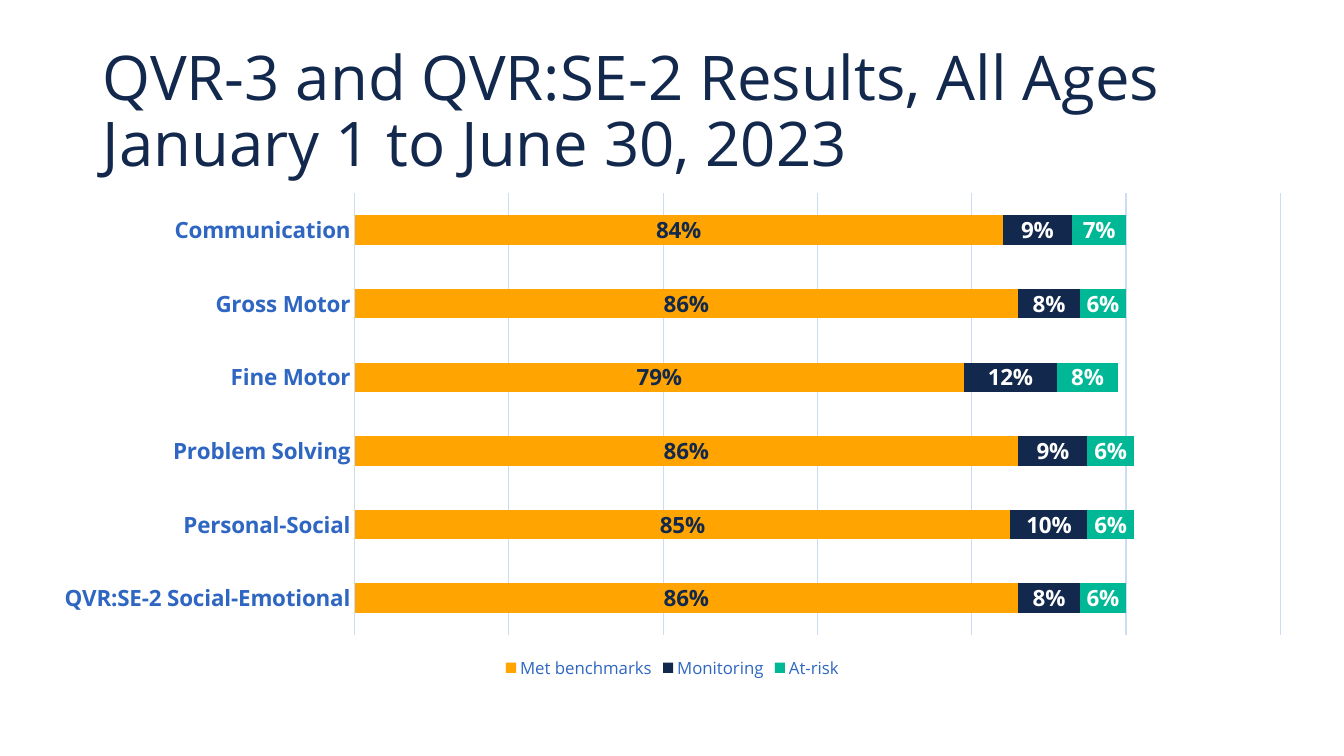
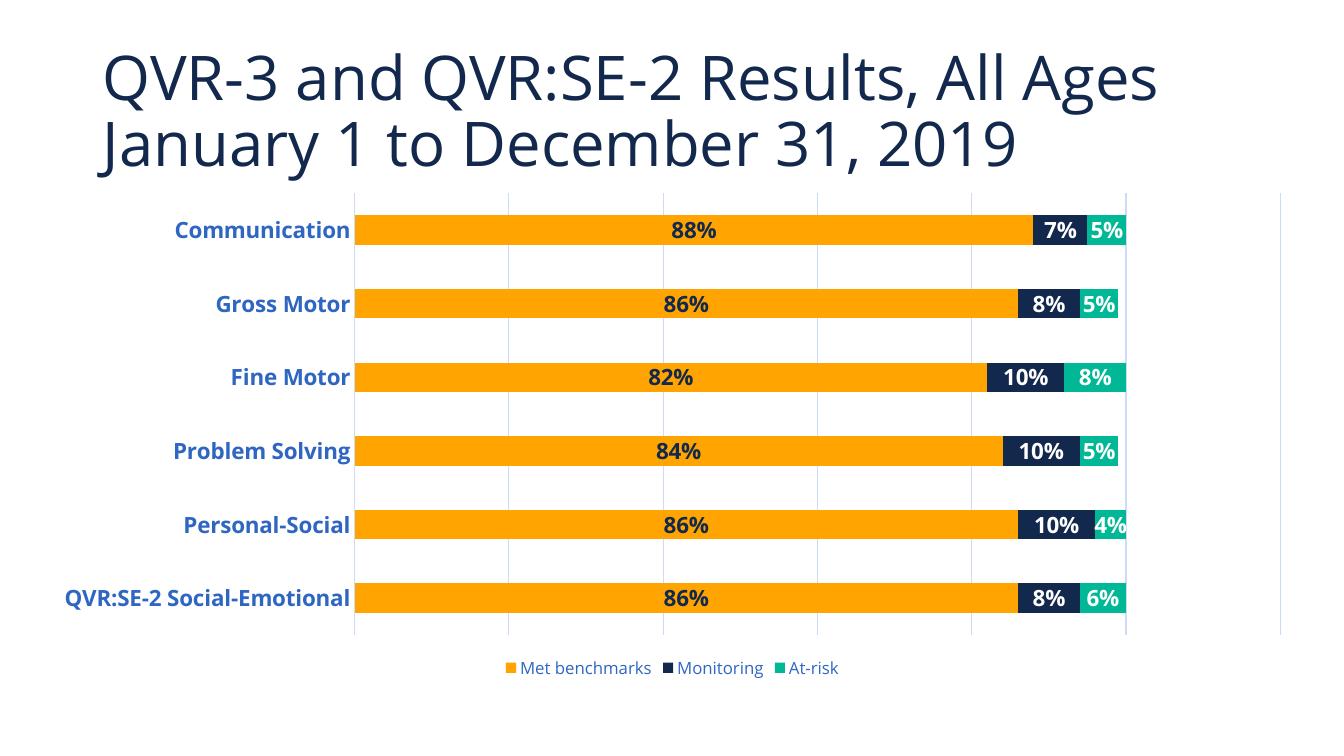
from pptx import Presentation
from pptx.chart.data import CategoryChartData
from pptx.dml.color import RGBColor
from pptx.enum.chart import (XL_CHART_TYPE, XL_LABEL_POSITION,
                             XL_LEGEND_POSITION, XL_TICK_MARK)
from pptx.enum.text import MSO_ANCHOR, MSO_AUTO_SIZE, PP_ALIGN
from pptx.util import Inches, Pt

BAR_STACKED = XL_CHART_TYPE.BAR_STACKED
CENTER = XL_LABEL_POSITION.CENTER
BOTTOM = XL_LEGEND_POSITION.BOTTOM
NO_TICK = XL_TICK_MARK.NONE
MIDDLE = MSO_ANCHOR.MIDDLE
NO_AUTOFIT = MSO_AUTO_SIZE.NONE
LEFT = PP_ALIGN.LEFT

SLIDE_W, SLIDE_H = 13.33, 7.5
TITLE_BOX = (0.92, 0.4, 11.5, 1.45)
CHART_BOX = (0.39, 1.82, 12.56, 4.96)
FONT = "Open Sans"
PERCENT = "0%"
COLORS = {
    "navy": "12284C",
    "blue": "2E66C2",
    "orange": "FFA400",
    "green": "00B796",
    "white": "FFFFFF",
    "grid": "CDDBF3",
}

TITLE = "QVR-3 and QVR:SE-2 Results, All Ages"
DOMAINS = ["QVR:SE-2 Social-Emotional", "Personal-Social", "Problem Solving",
           "Fine Motor", "Gross Motor", "Communication"]
# Result level, bar colour, label colour
LEVELS = [
    ("Met benchmarks", "orange", "navy"),
    ("Monitoring", "navy", "white"),
    ("At-risk", "green", "white"),
]
# Period, then one row of shares for each level, in the order of DOMAINS
PERIODS = [
    ("January 1 to June 30, 2023", [
        [0.86, 0.85, 0.86, 0.79, 0.86, 0.84],
        [0.08, 0.10, 0.09, 0.12, 0.08, 0.09],
        [0.06, 0.06, 0.06, 0.08, 0.06, 0.07],
    ]),
    ("January 1 to December 31, 2019", [
        [0.86, 0.86, 0.84, 0.82, 0.86, 0.88],
        [0.08, 0.10, 0.10, 0.10, 0.08, 0.07],
        [0.06, 0.04, 0.05, 0.08, 0.05, 0.05],
    ]),
]


def rgb(name):
    return RGBColor.from_string(COLORS[name])


def style_font(font, size, color, bold=False):
    font.name = FONT
    font.size = Pt(size)
    font.bold = bold
    font.color.rgb = rgb(color)


def style_line(line, color="grid", width=0.75):
    line.color.rgb = rgb(color)
    line.width = Pt(width)


def set_title(slide, lines, box):
    sp = slide.shapes.title
    sp.left, sp.top, sp.width, sp.height = map(Inches, box)
    tf = sp.text_frame
    tf.word_wrap = True
    tf.auto_size = NO_AUTOFIT
    tf.vertical_anchor = MIDDLE
    p = tf.paragraphs[0]
    p.alignment = LEFT
    p.line_spacing = 0.9
    style_font(p.font, 44, "navy")
    for i, line in enumerate(lines):
        if i:
            p.add_line_break()
        r = p.add_run()
        r.text = line
        style_font(r.font, 44, "navy")


def style_axes(chart):
    cat = chart.category_axis
    cat.major_tick_mark = cat.minor_tick_mark = NO_TICK
    style_font(cat.tick_labels.font, 16, "blue", bold=True)
    style_line(cat.format.line)

    val = chart.value_axis
    val.minimum_scale, val.maximum_scale, val.major_unit = 0, 1.2, 0.2
    val.tick_labels.number_format = PERCENT
    val.tick_labels.number_format_is_linked = False
    val.has_major_gridlines = True
    style_line(val.major_gridlines.format.line)
    val.visible = False


def style_series(series, fill, label_color):
    series.format.fill.solid()
    series.format.fill.fore_color.rgb = rgb(fill)
    series.invert_if_negative = False
    labels = series.data_labels
    labels.show_value = True
    labels.position = CENTER
    labels.number_format = PERCENT
    labels.number_format_is_linked = False
    style_font(labels.font, 16, label_color, bold=True)


def add_results_chart(slide, rows, box):
    data = CategoryChartData(number_format=PERCENT)
    data.categories = DOMAINS
    for (level, _, _), values in zip(LEVELS, rows):
        data.add_series(level, values)
    chart = slide.shapes.add_chart(BAR_STACKED, *map(Inches, box), data).chart
    chart.has_title = False
    style_font(chart.font, 10, "navy")
    style_axes(chart)

    plot = chart.plots[0]
    plot.gap_width = 150
    plot.overlap = 100
    plot.vary_by_categories = False
    for series, (_, fill, label_color) in zip(plot.series, LEVELS):
        style_series(series, fill, label_color)

    chart.has_legend = True
    chart.legend.position = BOTTOM
    chart.legend.include_in_layout = False
    style_font(chart.legend.font, 12, "blue")


def add_results_slide(prs, period, rows):
    slide = prs.slides.add_slide(prs.slide_layouts.get_by_name("Title Only"))
    set_title(slide, [TITLE, period], TITLE_BOX)
    add_results_chart(slide, rows, CHART_BOX)


def main():
    prs = Presentation()
    prs.slide_width, prs.slide_height = Inches(SLIDE_W), Inches(SLIDE_H)
    for period, rows in PERIODS:
        add_results_slide(prs, period, rows)
    prs.save("out.pptx")


if __name__ == "__main__":
    main()
